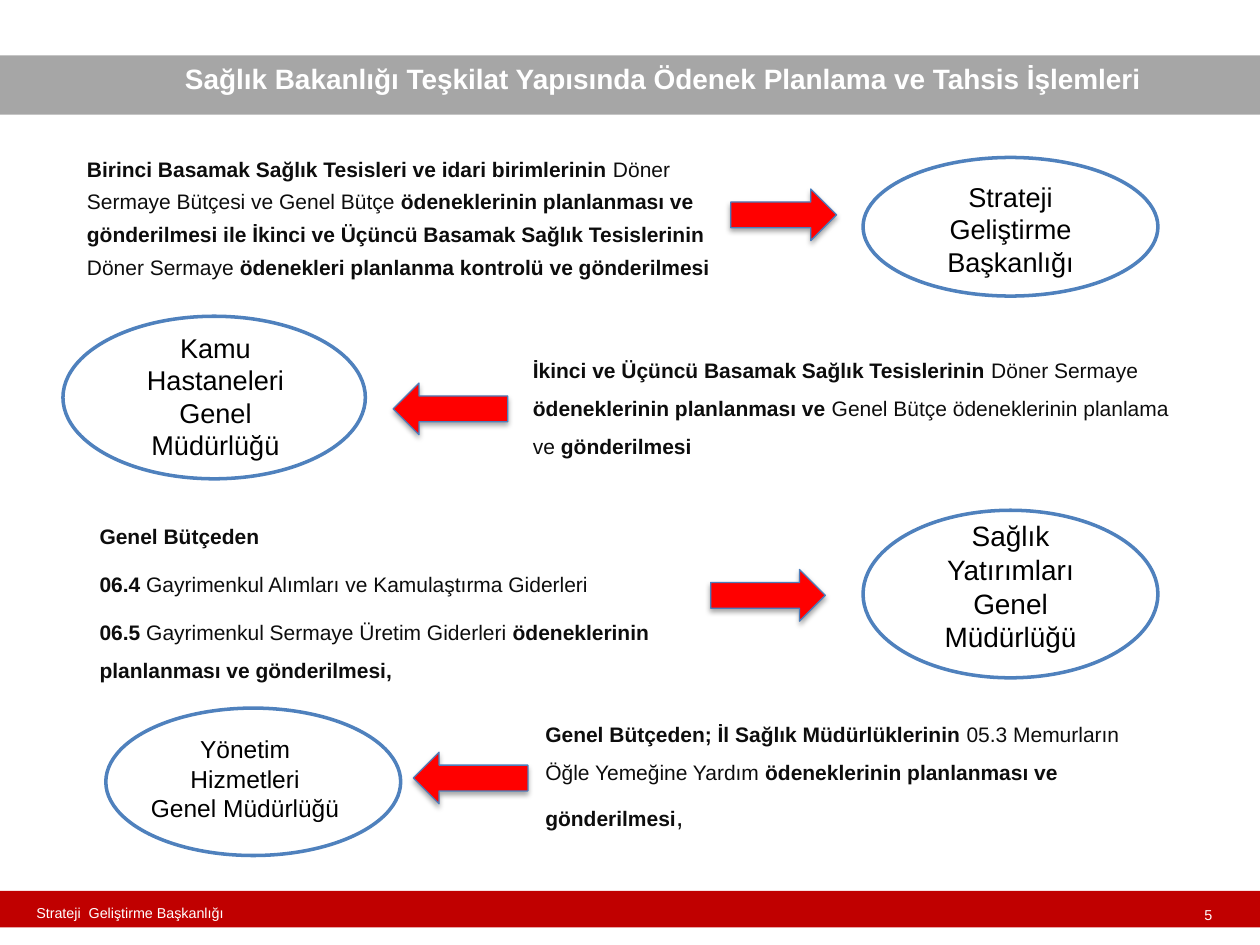
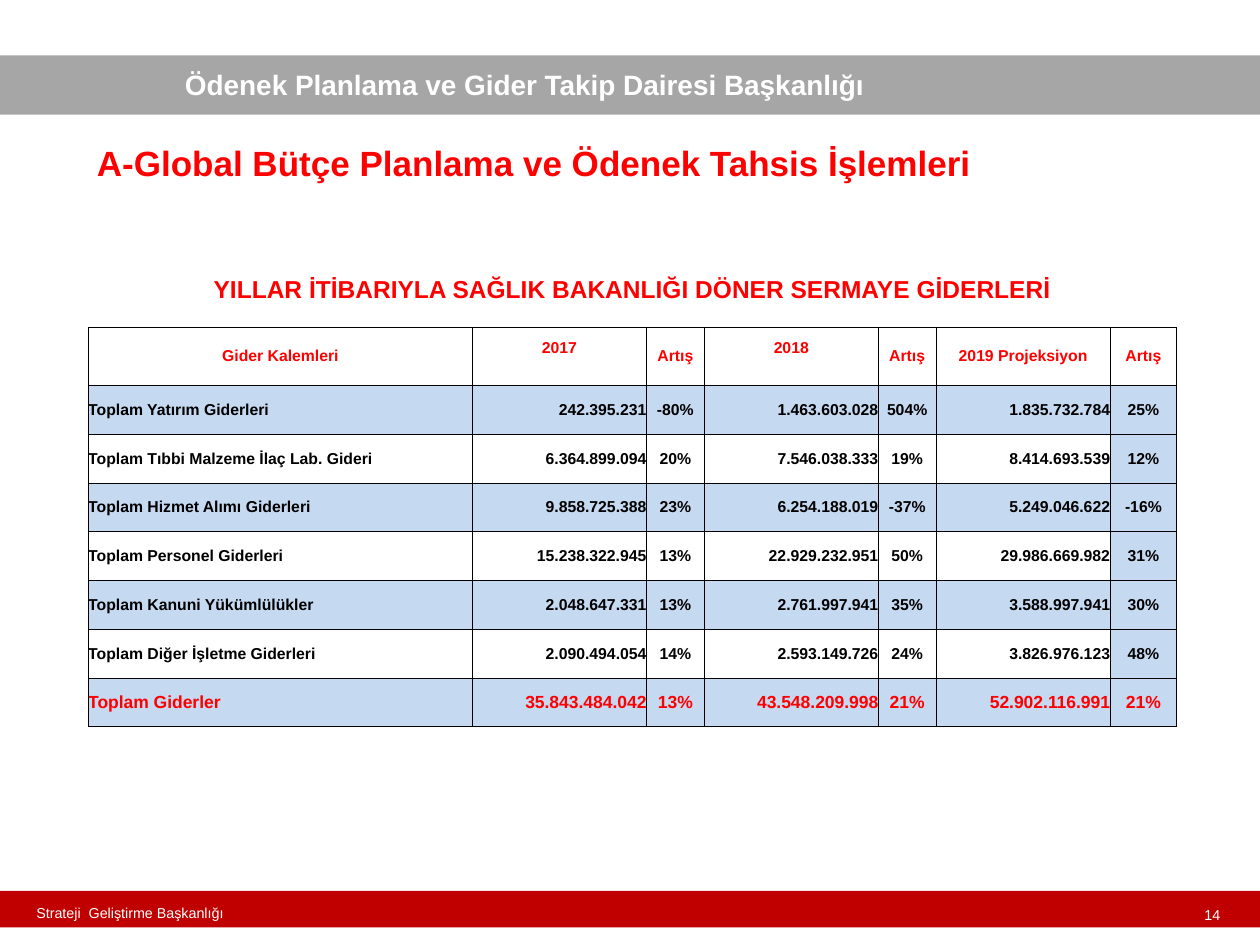
from lxml import etree
from pptx import Presentation
from pptx.dml.color import RGBColor
from pptx.enum.shapes import MSO_SHAPE as Kind
from pptx.enum.text import MSO_ANCHOR as Anchor, PP_ALIGN as Align
from pptx.oxml.ns import qn
from pptx.util import Inches, Pt

COLORS = {
    "white": "FFFFFF", "black": "000000", "ink": "0D0D0D", "red": "FF0000",
    "footer": "C00000", "band": "A6A6A6", "ring": "4F81BD", "edge": "4B7EBC",
    "stripe": "C5D9F1",
}
FONT = "Arial"
FOOTER = "Strateji  Geliştirme Başkanlığı"


def rgb(name):
    return RGBColor.from_string(COLORS[name])


def write(frame, text, size=12, color="black", bold=False, align=Align.LEFT,
          spacing=None, after=None):
    """Fill a frame, one paragraph a line; asterisks switch bold on and off."""
    for i, line in enumerate(text.split("\n")):
        para = frame.paragraphs[0] if i == 0 else frame.add_paragraph()
        para.alignment = align
        if spacing:
            para.line_spacing = spacing
        if after:
            para.space_after = Pt(after)
        for j, part in enumerate(line.split("*")):
            if not part:
                continue
            run = para.add_run()
            run.text = part
            font = run.font
            font.name, font.size = FONT, Pt(size)
            font.bold = bold or j % 2 == 1
            font.color.rgb = rgb(color)


def add_node(parent, tag, **attrs):
    return etree.SubElement(parent, qn(tag), attrs)


def outline(cell, sides):
    """Draw thin black borders on the given sides of a cell."""
    props = cell._tc.get_or_add_tcPr()
    for side in sides:
        line = add_node(props, "a:ln" + side, w=str(Pt(0.5)))
        fill = add_node(line, "a:solidFill")
        add_node(fill, "a:srgbClr", val=COLORS["black"])


class Deck:
    def __init__(self):
        self.show = Presentation()
        self.show.slide_width, self.show.slide_height = Inches(10), Inches(7.5)
        self.slide = None

    def page(self, title, number, top):
        """Start a slide with its bands, title and footer."""
        self.slide = self.show.slides.add_slide(self.show.slide_layouts[6])
        self.shape(Kind.RECTANGLE, 0, 7.07, 10, 0.29, "footer")
        self.shape(Kind.RECTANGLE, 0, 0.44, 10, 0.47, "band")
        num = self.text(str(number), 9.56, 7.19, 0.14, 0.14, inset=0, wrap=False,
                        size=8.2, color="white")
        num.margin_top = num.margin_bottom = 0
        num.vertical_anchor = Anchor.MIDDLE
        self.text(FOOTER, 0.19, 7.13, 1.72, 0.24, wrap=False, size=8.2, color="white")
        self.text(title, 1.37, top, 8.63, 0.37, size=16, color="white", bold=True)

    def shape(self, kind, x, y, w, h, fill, line=None, width=1):
        item = self.slide.shapes.add_shape(kind, Inches(x), Inches(y), Inches(w), Inches(h))
        item.shadow.inherit = False
        item.fill.solid()
        item.fill.fore_color.rgb = rgb(fill)
        if line:
            item.line.color.rgb = rgb(line)
            item.line.width = Pt(width)
        else:
            item.line.fill.background()
        return item

    def text(self, text, x, y, w, h, inset=0.1, wrap=True, **style):
        box = self.slide.shapes.add_textbox(Inches(x), Inches(y), Inches(w), Inches(h))
        frame = box.text_frame
        frame.word_wrap = wrap
        frame.margin_left = frame.margin_right = Inches(inset)
        write(frame, text, **style)
        return frame

    def unit(self, name, size, oval, label):
        """Draw a department: an outlined oval with its name on top."""
        self.shape(Kind.OVAL, *oval, "white", "ring", 2)
        self.text(name, *label, size=size, align=Align.CENTER)

    def arrow(self, kind, x, y, w):
        item = self.shape(kind, x, y, w, 0.41, "red", "edge", 0.75)
        effects = item._element.spPr.find(qn("a:effectLst"))
        shade = add_node(effects, "a:outerShdw", blurRad=str(Pt(3.1)), dist=str(Pt(1.8)),
                         dir="5400000", rotWithShape="0")
        tint = add_node(shade, "a:srgbClr", val=COLORS["black"])
        add_node(tint, "a:alpha", val="35000")

    def cell(self, cell, text, fill=None, sides="LRTB", **style):
        cell.margin_left = cell.margin_right = cell.margin_top = cell.margin_bottom = 0
        cell.vertical_anchor = Anchor.MIDDLE
        outline(cell, sides)
        if fill:
            cell.fill.solid()
            cell.fill.fore_color.rgb = rgb(fill)
        else:
            cell.fill.background()
        write(cell.text_frame, text, bold=True, **style)

    def table(self, x, y, title, rows, widths, heights):
        """Draw a table with a merged title row, a header and a total row."""
        grid = self.slide.shapes.add_table(
            len(rows) + 1, len(widths), Inches(x), Inches(y),
            Inches(sum(widths)), Inches(sum(heights))).table
        grid.first_row = grid.horz_banding = False
        for col, width in zip(grid.columns, widths):
            col.width = Inches(width)
        for row, height in zip(grid.rows, heights):
            row.height = Inches(height)
        grid.cell(0, 0).merge(grid.cell(0, len(widths) - 1))
        self.cell(grid.cell(0, 0), title, sides="B", size=14, color="red",
                  align=Align.CENTER)
        last = len(widths) - 1
        for r, row in enumerate(rows, 1):
            head, total = r == 1, r == len(rows)
            for c, value in enumerate(row):
                if head or (c and c % 2 == 0):
                    align = Align.CENTER
                else:
                    align = Align.RIGHT if c else Align.LEFT
                striped = r % 2 == 0 or c == last
                fill = None if head else "stripe" if striped else "white"
                self.cell(grid.cell(r, c), value, fill, size=10 if total else 9,
                          color="red" if head or total else "black", align=align)
        return grid


UNITS = [
    ("Strateji Geliştirme Başkanlığı", 15.5,
     (6.85, 1.25, 2.34, 1.1), (7.18, 1.38, 1.68, 0.9)),
    ("Kamu Hastaneleri\nGenel Müdürlüğü", 15.5,
     (0.5, 2.51, 2.4, 1.29), (0.86, 2.58, 1.7, 1.17)),
    ("Sağlık Yatırımları Genel Müdürlüğü", 16,
     (6.85, 4.05, 2.34, 1.33), (7.18, 4.07, 1.68, 1.17)),
    ("Yönetim Hizmetleri\nGenel Müdürlüğü", 14,
     (0.84, 5.62, 2.34, 1.17), (1.07, 5.78, 1.75, 0.81)),
]
ARROWS = [
    (Kind.RIGHT_ARROW, 5.8, 1.5, 0.84),
    (Kind.LEFT_ARROW, 3.12, 3.04, 0.91),
    (Kind.RIGHT_ARROW, 5.64, 4.52, 0.91),
    (Kind.LEFT_ARROW, 3.28, 5.97, 0.91),
]
DUTIES = [
    ("*Birinci Basamak Sağlık Tesisleri ve idari birimlerinin *Döner Sermaye Bütçesi ve "
     "Genel Bütçe *ödeneklerinin planlanması ve gönderilmesi ile İkinci ve Üçüncü Basamak "
     "Sağlık Tesislerinin *Döner Sermaye *ödenekleri planlanma kontrolü ve gönderilmesi*",
     (0.69, 1.13, 5.12, 1.51), 0, 1.3),
    ("*İkinci ve Üçüncü Basamak Sağlık Tesislerinin *Döner Sermaye *ödeneklerinin "
     "planlanması ve *Genel Bütçe ödeneklerinin planlama ve *gönderilmesi*",
     (4.23, 2.69, 5.23, 1.32), 0, 1.5),
    ("*Genel Bütçeden*\n*06.4* Gayrimenkul Alımları ve Kamulaştırma Giderleri\n"
     "*06.5 *Gayrimenkul Sermaye Üretim Giderleri *ödeneklerinin planlanması ve "
     "gönderilmesi,*",
     (0.79, 4.01, 4.93, 1.44), 0, 1.5),
    ("*Genel Bütçeden; İl Sağlık Müdürlüklerinin *05.3 Memurların Öğle Yemeğine Yardım "
     "*ödeneklerinin planlanması ve gönderilmesi*,",
     (4.23, 5.58, 5, 1.09), 0.1, 1.5),
]
COSTS = [
    ("Gider Kalemleri", "2017", "Artış", "2018", "Artış", "2019 Projeksiyon", "Artış"),
    ("Toplam Yatırım Giderleri", "242.395.231", "-80%", "1.463.603.028", "504%",
     "1.835.732.784", "25%"),
    ("Toplam Tıbbi Malzeme İlaç Lab. Gideri", "6.364.899.094", "20%", "7.546.038.333",
     "19%", "8.414.693.539", "12%"),
    ("Toplam Hizmet Alımı Giderleri", "9.858.725.388", "23%", "6.254.188.019", "-37%",
     "5.249.046.622", "-16%"),
    ("Toplam Personel Giderleri", "15.238.322.945", "13%", "22.929.232.951", "50%",
     "29.986.669.982", "31%"),
    ("Toplam Kanuni Yükümlülükler", "2.048.647.331", "13%", "2.761.997.941", "35%",
     "3.588.997.941", "30%"),
    ("Toplam Diğer İşletme Giderleri", "2.090.494.054", "14%", "2.593.149.726", "24%",
     "3.826.976.123", "48%"),
    ("Toplam Giderler", "35.843.484.042", "13%", "43.548.209.998", "21%",
     "52.902.116.991", "21%"),
]


def duties(deck):
    deck.page("Sağlık Bakanlığı Teşkilat Yapısında Ödenek Planlama ve Tahsis İşlemleri",
              5, 0.44)
    for unit in UNITS:
        deck.unit(*unit)
    for arrow in ARROWS:
        deck.arrow(*arrow)
    for text, place, inset, spacing in DUTIES:
        frame = deck.text(text, *place, inset=inset, color="ink", spacing=spacing,
                          after=5.8)
    comma = frame.paragraphs[0].runs[-1]
    comma.font.size = Pt(15)


def costs(deck):
    deck.page("Ödenek Planlama ve Gider Takip Dairesi Başkanlığı", 14, 0.49)
    deck.text("A-Global Bütçe Planlama ve Ödenek Tahsis İşlemleri", 0.67, 1.07, 8.65, 0.44,
              size=20, color="red", bold=True)
    grid = deck.table(0.7, 2.01, "YILLAR İTİBARIYLA SAĞLIK BAKANLIĞI DÖNER SERMAYE GİDERLERİ",
                      COSTS, [3.05] + [1.38, 0.46] * 2 + [1.38, 0.53],
                      [0.59, 0.46] + [2.71 / 7] * 7)
    for col in (1, 3):
        grid.cell(1, col).margin_bottom = Inches(0.14)


def main():
    deck = Deck()
    duties(deck)
    costs(deck)
    deck.show.save("out.pptx")


if __name__ == "__main__":
    main()
